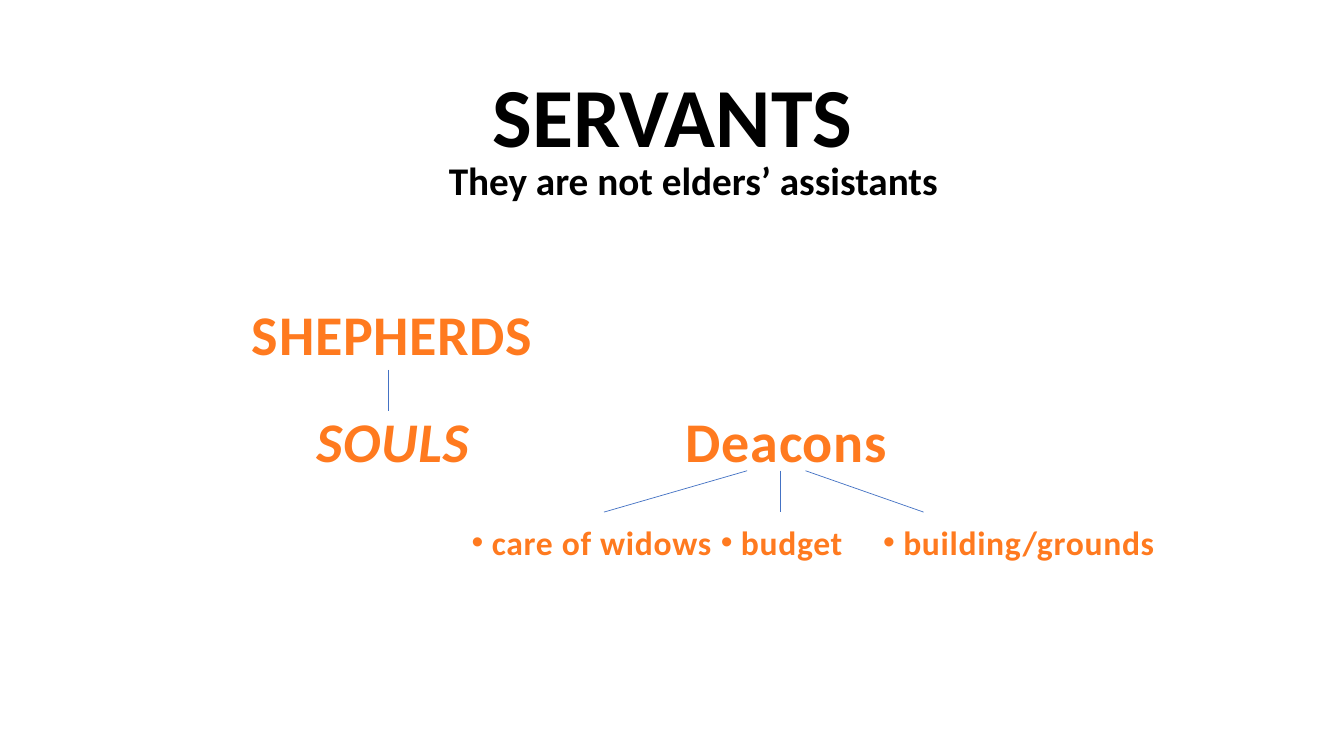
from lxml import etree
from pptx import Presentation
from pptx.dml.color import RGBColor
from pptx.enum.shapes import MSO_CONNECTOR
from pptx.enum.text import MSO_ANCHOR, MSO_AUTO_SIZE, PP_ALIGN
from pptx.oxml.ns import qn
from pptx.util import Inches, Pt

STRAIGHT = MSO_CONNECTOR.STRAIGHT
BOTTOM = MSO_ANCHOR.BOTTOM
FIXED, GROW = MSO_AUTO_SIZE.NONE, MSO_AUTO_SIZE.SHAPE_TO_FIT_TEXT
LEFT, CENTER = PP_ALIGN.LEFT, PP_ALIGN.CENTER

COLORS = {"heading": "000000", "branch": "FF7A1F", "line": "4472C4"}
FORMATS = {
    "title": {"size": Pt(60)},
    "subtitle": {"size": Pt(28)},
    "role": {"size": Pt(40)},
    "focus": {"size": Pt(40), "italic": True},
    "duty": {"size": Pt(24)},
}
BULLET_INDENT = Inches(0.2)
LETTER_SPACING = "50"

# Shares of the slide's width and height, in percent
TITLE = ("SERVANTS", 18.15, 1.07, 63.77, 21.47)
SUBTITLE = ("They are not elders’ assistants", 28.13, 20, 46.89, 7.6)
ROWS = {"shepherds": 38.93, "deacons": 53.07, "duties": 68.4}
HEIGHTS = {"role": 10.27, "focus": 10.27, "duty": 6.67}
BRANCHES = [
    ("SHEPHERDS", "role", "shepherds", 17.85, 22.66),
    ("SOULS", "focus", "deacons", 22.66, 13.13),
    ("Deacons", "role", "deacons", 50.19, 16.65),
    ("care of widows", "duty", "duties", 34.36, 19.58),
    ("budget", "duty", "duties", 52.89, 10.73),
    ("building/grounds", "duty", "duties", 64.97, 21.9),
]
LINE_RISE = 5.47
LINES = [
    (28.88, 28.88, 48.93),
    (55.59, 44.94, 62.27),
    (58.06, 58.06, 62.27),
    (59.94, 68.72, 62.27),
]

deck = Presentation()
deck.slide_width, deck.slide_height = Inches(13.33), Inches(7.5)
page = deck.slides.add_slide(deck.slide_layouts[5])


def across(share):
    return round(deck.slide_width * share / 100)


def down(share):
    return round(deck.slide_height * share / 100)


def write(box, text, style, color, align=CENTER):
    para = box.text_frame.paragraphs[0]
    para.alignment = align
    span = para.add_run()
    span.text = text
    span.font.color.rgb = RGBColor.from_string(COLORS[color])
    for name, value in {"name": "Calibri", "bold": True, **FORMATS[style]}.items():
        setattr(span.font, name, value)
    return para, span


def add_box(left, top, width, height, wrap):
    box = page.shapes.add_textbox(across(left), down(top), across(width), down(height))
    box.text_frame.word_wrap = wrap
    box.text_frame.auto_size = GROW
    return box


def add_bullet(para):
    props = para._p.get_or_add_pPr()
    props.set("marL", str(BULLET_INDENT))
    props.set("indent", str(-BULLET_INDENT))
    etree.SubElement(props, qn("a:buFont")).set("typeface", "Arial")
    etree.SubElement(props, qn("a:buChar")).set("char", "•")


def add_line(start, end, top):
    line = page.shapes.add_connector(
        STRAIGHT, across(start), down(top), across(end), down(top + LINE_RISE))
    line.line.color.rgb = RGBColor.from_string(COLORS["line"])
    line.line.width = Pt(0.5)
    etree.SubElement(line._element.spPr, qn("a:effectLst"))


text, left, top, width, height = TITLE
title = page.shapes.title
title.left, title.top = across(left), down(top)
title.width, title.height = across(width), down(height)
title.text_frame.vertical_anchor = BOTTOM
title.text_frame.auto_size = FIXED
para, span = write(title, text, "title", "heading")
para.line_spacing = 0.9

for text, style, row, left, width in BRANCHES:
    box = add_box(left, ROWS[row], width, HEIGHTS[style], False)
    para, span = write(box, text, style, "branch", LEFT if style == "duty" else CENTER)
    span.font._element.set("spc", LETTER_SPACING)
    if style == "duty":
        add_bullet(para)

for start, end, top in LINES:
    add_line(start, end, top)

text, *place = SUBTITLE
write(add_box(*place, True), text, "subtitle", "heading")

deck.save("out.pptx")
